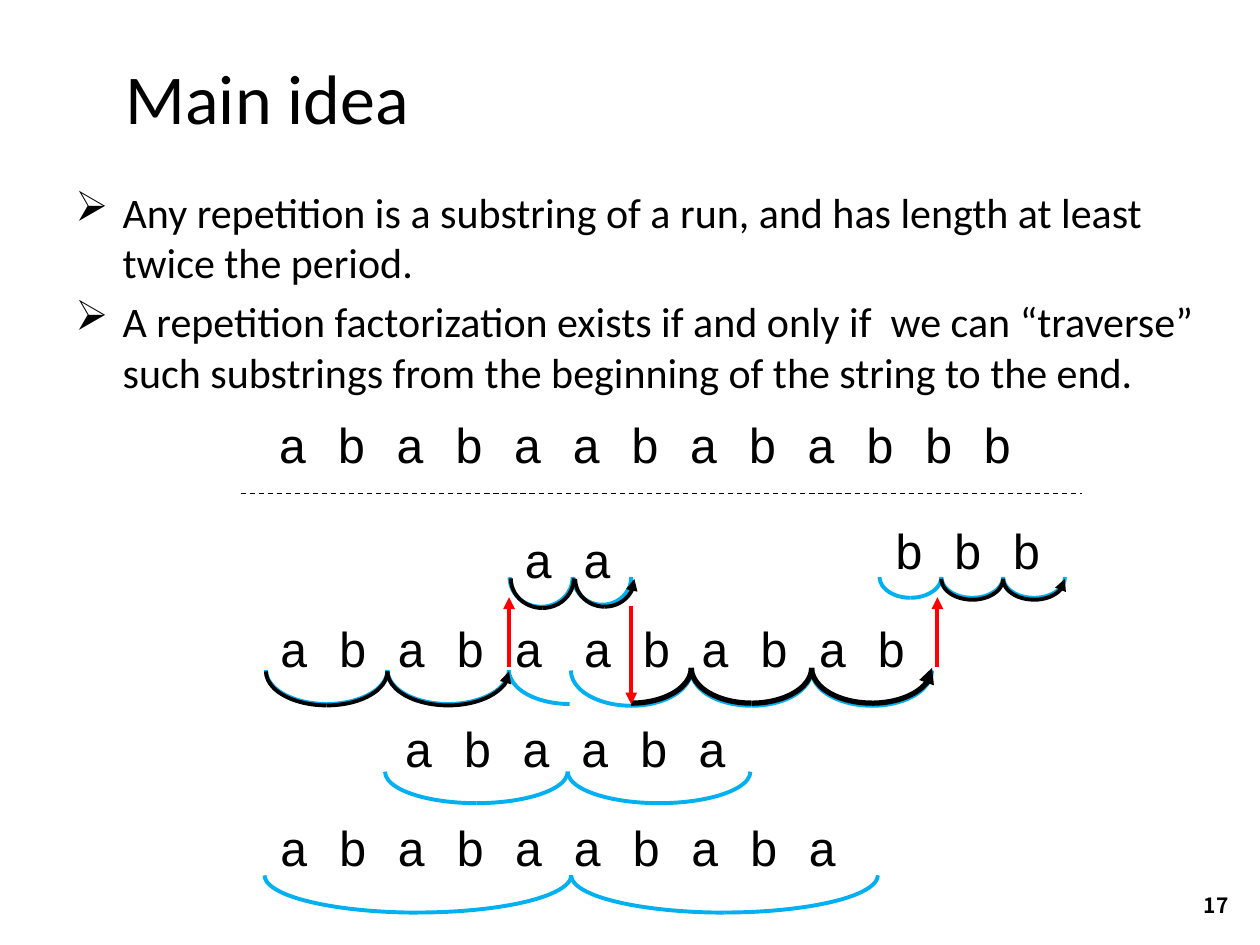
"""Build the "Main idea" slide on traversing runs of a string."""
from lxml import etree
from pptx import Presentation
from pptx.dml.color import RGBColor
from pptx.enum.dml import MSO_LINE
from pptx.enum.shapes import MSO_CONNECTOR, MSO_SHAPE
from pptx.enum.text import MSO_ANCHOR, PP_ALIGN
from pptx.oxml.ns import qn
from pptx.util import Pt

ARC, STRAIGHT, DASH = MSO_SHAPE.ARC, MSO_CONNECTOR.STRAIGHT, MSO_LINE.DASH
TOP, MIDDLE = MSO_ANCHOR.TOP, MSO_ANCHOR.MIDDLE
LEFT, RIGHT, JUSTIFY = PP_ALIGN.LEFT, PP_ALIGN.RIGHT, PP_ALIGN.JUSTIFY

COLORS = {"black": "000000", "blue": "00B0F0", "red": "FF0000"}
BODY, MONO, NUMBER = "Calibri", "Courier New", "Noto Sans CJK JP"

TITLE = "Main idea"
PAGE = "17"
BULLETS = [
    "Any repetition is a substring of a run, and has length at least twice the period.",
    "A repetition factorization exists if and only if  we can “traverse” such substrings "
    "from the beginning of the string to the end.",
]
STRINGS = [
    ("a b a b a a b a b a b b b", 151.9, 233.3, 452.2),
    ("a a", 292.3, 298.8, 67.7),
    ("b b b", 504, 293.8, 100.1),
    ("a b a b a", 152.6, 349.9, 171.4),
    ("a b a b a b", 326.2, 349.9, 206.6),
    ("a b a a b a", 223.9, 406.8, 204.5),
    ("a b a b a a b a b a", 152.6, 463.7, 344.2),
]

# Each cup row: colour, weight, left, top, width, height, and the halves of each cup.
CUPS = [
    ("blue", 2.25, 152, 348.2, 69.4, 38.9, ["RL", "RL", "L"]),
    ("blue", 2.25, 326.2, 348.8, 68.8, 40.3, ["RL", "RL", "RL"]),
    ("blue", 2.25, 502.6, 312.1, 35.3, 23.8, ["RL", "RL", "RL"]),
    ("blue", 2.25, 220, 388.8, 104.4, 36, ["RL", "RL"]),
    ("blue", 2.25, 291.2, 311.9, 36, 33.8, ["RL"]),
    ("blue", 2.25, 327.6, 313.2, 33.1, 31.7, ["RL"]),
    ("black", 2.25, 152, 349, 69.4, 38.9, ["RL", "AL"]),
    ("black", 2.25, 537.9, 313.2, 35.3, 23.8, ["RL", "AL"]),
    ("black", 2.25, 291.9, 312.6, 36, 33.8, ["RL"]),
    ("black", 2.25, 328.7, 314, 33.8, 31.7, ["AL"]),
    ("black", 3, 326.2, 347.3, 68.8, 40.3, ["R", "RL", "AL"]),
    ("blue", 2.25, 151.2, 412.6, 175.2, 42.5, ["RL", "RL"]),
]
JUMPS = [(290.9, 380.9, 341.3), (360.7, 346.3, 402.5), (535.7, 380.9, 341.3)]


def rgb(name):
    return RGBColor.from_string(COLORS[name])


def add_text(shapes, lines, x, y, w, h, font, size, align=LEFT, anchor=TOP,
             bold=False, bullet=None):
    tf = shapes.add_textbox(Pt(x), Pt(y), Pt(w), Pt(h)).text_frame
    tf.word_wrap = True
    tf.vertical_anchor = anchor
    for i, line in enumerate(lines):
        p = tf.paragraphs[0] if i == 0 else tf.add_paragraph()
        p.alignment = align
        if bullet:
            pPr = p._p.get_or_add_pPr()
            pPr.set("marL", str(Pt(27)))
            pPr.set("indent", str(-Pt(27)))
            etree.SubElement(pPr, qn("a:buChar")).set("char", bullet)
            p.space_before = Pt(size * 0.2 if i else 0)
        r = p.add_run()
        r.text = line
        r.font.name, r.font.size, r.font.bold = font, Pt(size), bold
        r.font.color.rgb = rgb("black")


def style_line(s, color, weight, arrow=None):
    s.line.color.rgb = rgb(color)
    s.line.width = Pt(weight)
    if arrow:
        etree.SubElement(s.line._get_or_add_ln(), qn(arrow)).set("type", "triangle")


def add_line(shapes, x1, y1, x2, y2, color, weight, arrow=None):
    s = shapes.add_connector(STRAIGHT, Pt(x1), Pt(y1), Pt(x2), Pt(y2))
    style_line(s, color, weight, arrow)
    etree.SubElement(s._element.spPr, qn("a:effectLst"))
    return s


def add_cups(shapes, color, weight, x, y, w, h, cups):
    group = shapes.add_group_shape().shapes
    for i, halves in enumerate(cups):
        left = x + i * w + (w - h) / 2
        for half in halves:
            s = group.add_shape(ARC, Pt(left), Pt(y), Pt(h), Pt(w))
            s.rotation = 90
            s.shadow.inherit = False
            s.fill.background()
            style_line(s, color, weight, "a:headEnd" if half == "A" else None)
            if half == "L":
                s._element.spPr.xfrm.set("flipV", "1")


def main():
    prs = Presentation()
    prs.slide_width, prs.slide_height = Pt(720), Pt(540)
    shapes = prs.slides.add_slide(prs.slide_layouts[6]).shapes

    add_text(shapes, [TITLE], 64.8, 21.6, 619.2, 67, BODY, 40, anchor=MIDDLE)
    add_text(shapes, BULLETS, 36, 103, 658, 141.8, BODY, 24, bullet="➢")
    add_text(shapes, [PAGE], 660.2, 502.6, 49, 28.8, NUMBER, 12, RIGHT, MIDDLE, True)
    for text, x, y, w in STRINGS:
        add_text(shapes, [text], x, y, w, 41, MONO, 28, JUSTIFY)

    divider = add_line(shapes, 137.5, 282.2, 618.5, 282.2, "black", 0.75)
    divider.line.dash_style = DASH
    for row in CUPS:
        add_cups(shapes, *row)
    for x, start, end in JUMPS:
        add_line(shapes, x, start, x, end, "red", 2.25, "a:tailEnd")

    prs.save("out.pptx")


if __name__ == "__main__":
    main()
